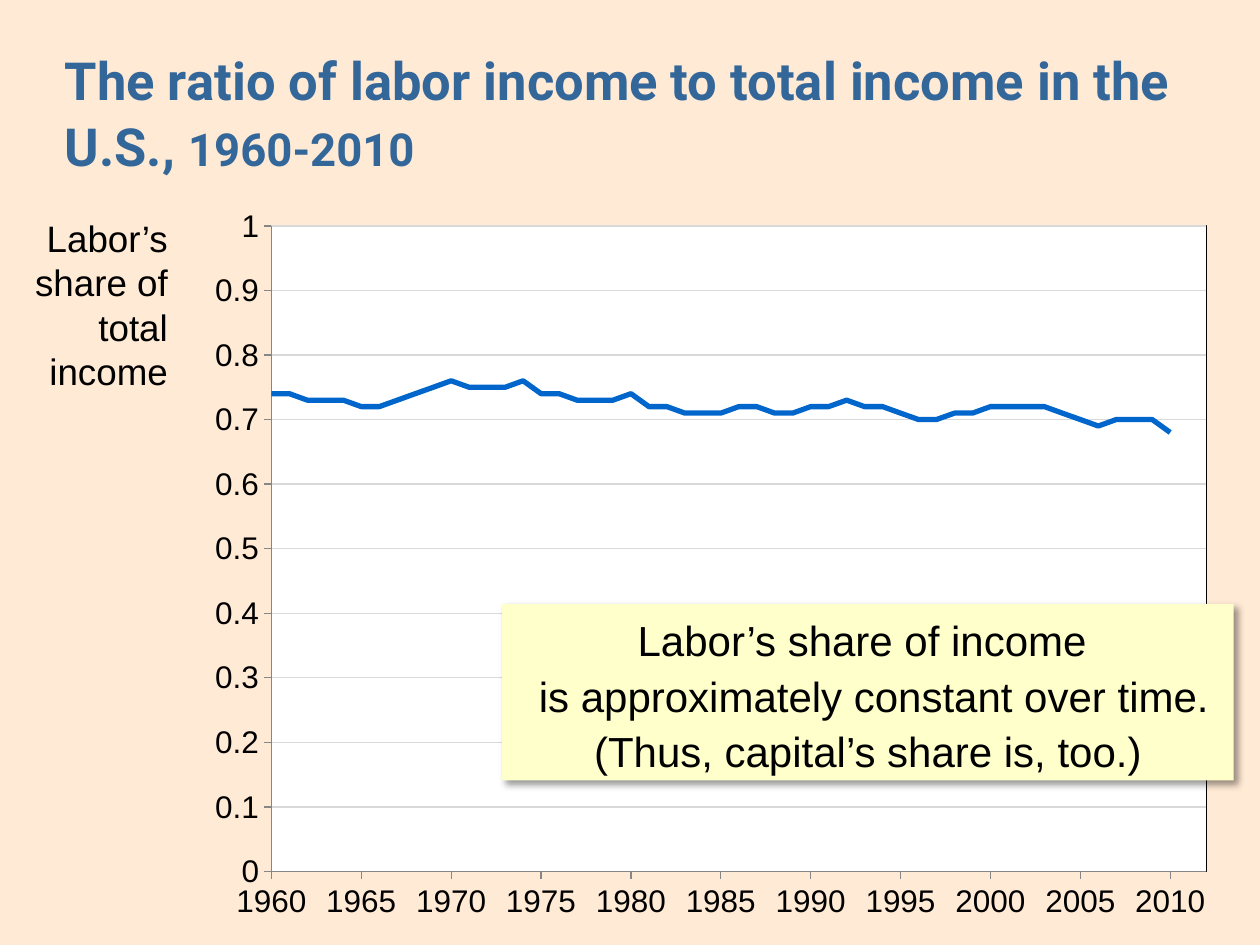
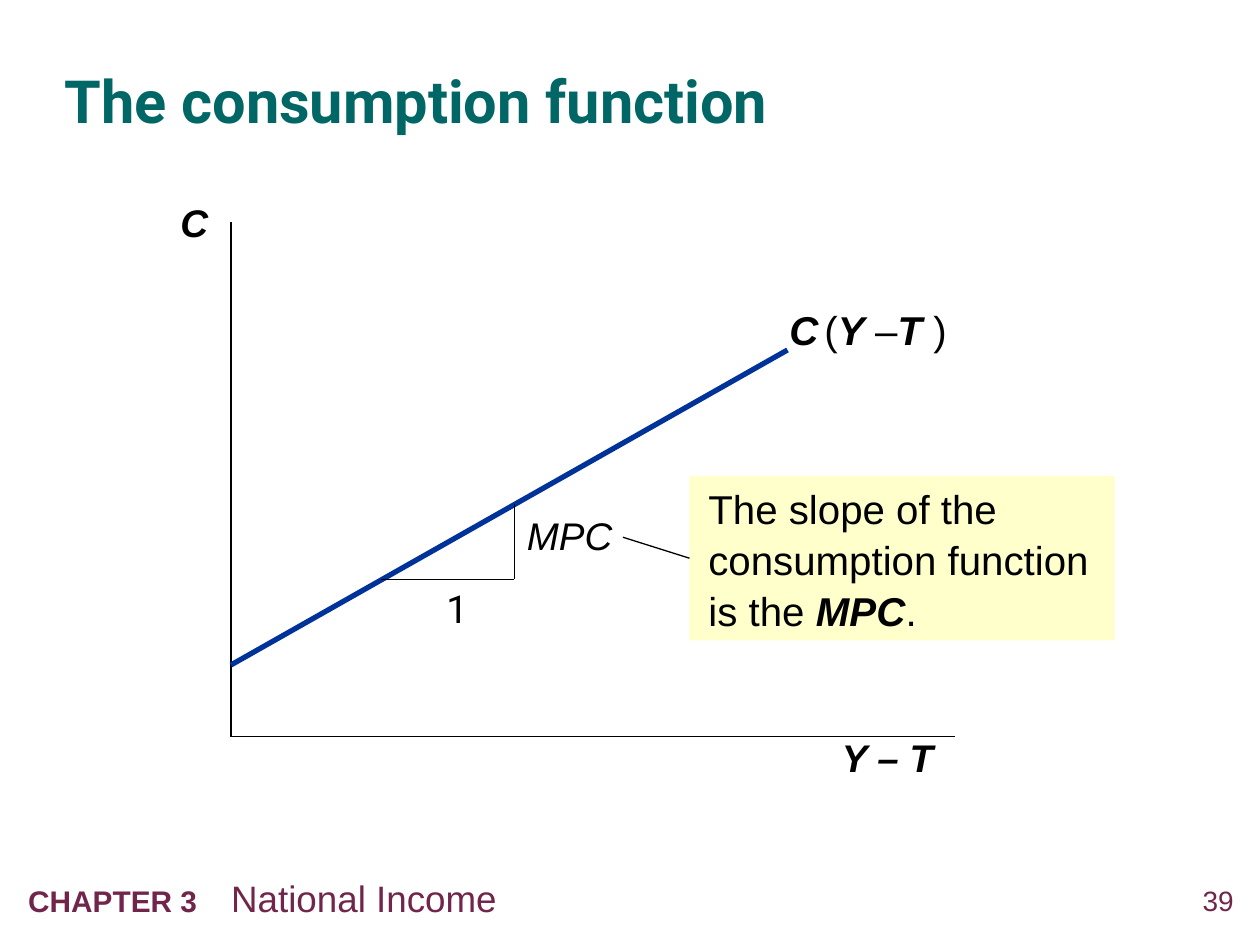
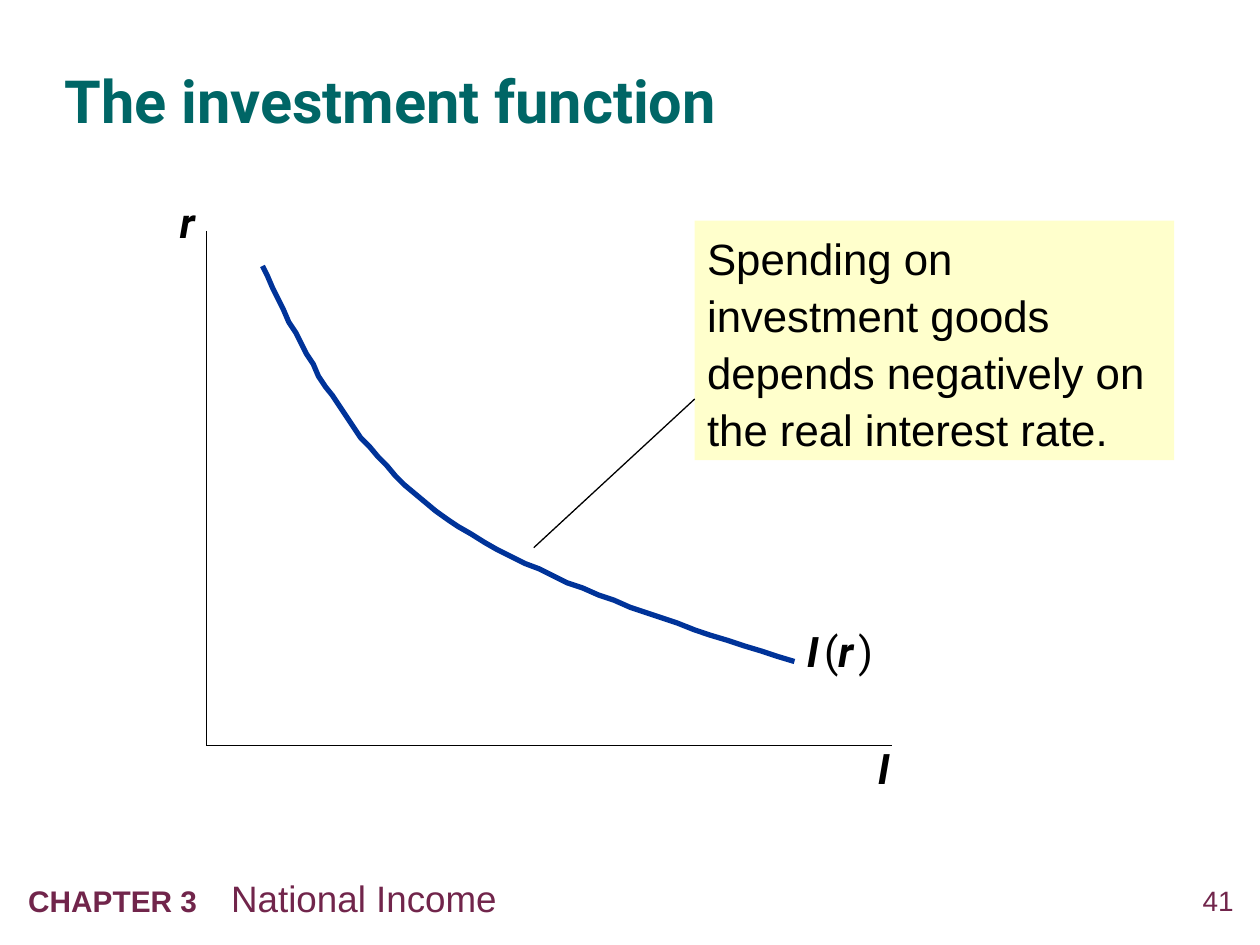
from dataclasses import dataclass

from lxml import etree
from pptx import Presentation
from pptx.chart.data import XyChartData
from pptx.dml.color import RGBColor as RGB
from pptx.enum.chart import XL_CHART_TYPE as Kind, XL_TICK_MARK as Tick
from pptx.enum.shapes import MSO_CONNECTOR as Link, MSO_SHAPE as Shape
from pptx.enum.text import MSO_ANCHOR as Anchor, MSO_AUTO_SIZE as Fit, PP_ALIGN as Align
from pptx.oxml import parse_xml
from pptx.oxml.ns import nsdecls, qn
from pptx.util import Pt


@dataclass(frozen=True)
class Theme:
    sans: str = "Arial"
    head: str = "Roboto"
    ink: str = "000000"
    white: str = "FFFFFF"
    peach: str = "FFEAD5"
    blue: str = "336699"
    teal: str = "006666"
    plum: str = "71254B"
    cream: str = "FFFFCC"
    curve: str = "003399"
    trend: str = "0066CC"
    grid: str = "D9D9D9"
    axis: str = "868686"
    big: int = 34
    wide: int = 30
    years: int = 26
    tick: int = 18
    note: int = 21
    sign: int = 22
    text: int = 23
    mark: int = 24
    call: int = 25
    gap: int = 12
    page: int = 16
    lead: int = 17
    thin: float = 0.75
    thick: float = 3


T = Theme()
HEAVY = dict(bold=True, italic=True)
PLAIN = dict(bold=False, italic=False)
SHARE = [
    0.74, 0.74, 0.73, 0.73, 0.73, 0.72, 0.72, 0.73, 0.74, 0.75,
    0.76, 0.75, 0.75, 0.75, 0.76, 0.74, 0.74, 0.73, 0.73, 0.73,
    0.74, 0.72, 0.72, 0.71, 0.71, 0.71, 0.72, 0.72, 0.71, 0.71,
    0.72, 0.72, 0.73, 0.72, 0.72, 0.71, 0.70, 0.70, 0.71, 0.71,
    0.72, 0.72, 0.72, 0.72, 0.71, 0.70, 0.69, 0.70, 0.70, 0.70, 0.68,
]


def color(code):
    return RGB.from_string(code)


def points(*nums):
    return [Pt(n) for n in nums]


def paint(line, code, width):
    line.color.rgb = color(code)
    line.width = Pt(width)


def style(font, size, face=T.sans, ink=T.ink, bold=False, italic=False):
    font.size, font.name = Pt(size), face
    font.bold, font.italic = bold, italic
    font.color.rgb = color(ink)


def write(frame, chunks, align=Align.LEFT, space=None, pad=(7.2, 3.6),
          anchor=Anchor.TOP, fit=Fit.SHAPE_TO_FIT_TEXT, **base):
    frame.word_wrap = True
    frame.auto_size = fit
    frame.vertical_anchor = anchor
    frame.margin_left = frame.margin_right = Pt(pad[0])
    frame.margin_top = frame.margin_bottom = Pt(pad[1])
    para = frame.paragraphs[0]
    para.alignment = align
    if space:
        para.line_spacing = space
    if isinstance(chunks, str):
        chunks = [(chunks, {})]
    for text, look in chunks:
        for i, piece in enumerate(text.split("\n")):
            if i:
                para.add_line_break()
            run = para.add_run()
            run.text = piece
            style(run.font, **{**base, **look})
    return para


def label(slide, box, chunks, **look):
    return write(slide.shapes.add_textbox(*points(*box)).text_frame, chunks, **look)


def callout(slide, box, chunks, **look):
    shape = slide.shapes.add_shape(Shape.RECTANGLE, *points(*box))
    shape.shadow.inherit = False
    shape.fill.solid()
    shape.fill.fore_color.rgb = color(T.cream)
    shape.line.fill.background()
    write(shape.text_frame, chunks, **look)
    return shape


def cast(shape):
    effects = shape._element.spPr.find(qn("a:effectLst"))
    effects.append(parse_xml(
        f'<a:outerShdw {nsdecls("a")} blurRad="{Pt(4)}" dist="{Pt(3)}" dir="2700000">'
        f'<a:srgbClr val="{T.ink}"><a:alpha val="40000"/></a:srgbClr></a:outerShdw>'))


def stroke(slide, start, end, ink=T.ink, width=T.thin):
    line = slide.shapes.add_connector(Link.STRAIGHT, *points(*start, *end))
    paint(line.line, ink, width)
    etree.SubElement(line._element.spPr, qn("a:effectLst"))
    return line


def axes(slide, left, top, right, base):
    stroke(slide, (left, top), (left, base))
    stroke(slide, (left, base), (right, base))


def bend(start, turns, steps=24):
    for one, two, end in turns:
        for i in range(1, steps + 1):
            t = i / steps
            u = 1 - t
            yield tuple(
                u**3 * a + 3 * u * u * t * b + 3 * u * t * t * c + t**3 * d
                for a, b, c, d in zip(start, one, two, end))
        start = end


def curve(slide, start, turns):
    form = slide.shapes.build_freeform(*start, scale=Pt(1))
    form.add_line_segments(list(bend(start, turns)), close=False)
    shape = form.convert_to_shape()
    shape.shadow.inherit = False
    shape.fill.background()
    paint(shape.line, T.curve, T.thick)


def start_slide(deck, title, box, back=T.white, **look):
    slide = deck.slides.add_slide(deck.slide_layouts[5])
    slide.background.fill.solid()
    slide.background.fill.fore_color.rgb = color(back)
    head = slide.shapes.title
    head.left, head.top, head.width, head.height = points(*box)
    write(head.text_frame, title, space=1.05, pad=(0, 0), anchor=Anchor.MIDDLE,
          fit=Fit.NONE, face=T.head, bold=True, **look)
    return slide


def footer(slide, page):
    label(slide, (665, 505, 40, 23), page, align=Align.RIGHT, pad=(0, 0),
          fit=Fit.NONE, size=T.page, ink=T.plum)
    para = label(slide, (9, 497, 589, 32), [
        ("CHAPTER 3\t", dict(size=T.lead, bold=True)),
        ("National Income", dict(size=T.note)),
    ], ink=T.plum)
    tabs = etree.SubElement(para._p.get_or_add_pPr(), qn("a:tabLst"))
    etree.SubElement(tabs, qn("a:tab"), pos=str(Pt(116)), algn="l")


def graph_slide(deck, title, page):
    slide = start_slide(deck, title, (37, 19, 649, 74), size=T.big, ink=T.teal)
    footer(slide, page)
    return slide


def frame_plot(chart, x, y, w, h):
    area = chart._chartSpace.chart.plotArea
    old = area.find(qn("c:layout"))
    if old is not None:
        area.remove(old)
    sizes = "".join(f'<c:{k} val="{v}"/>' for k, v in zip("xywh", (x, y, w, h)))
    area.insert(0, parse_xml(
        f'<c:layout {nsdecls("c")}><c:manualLayout><c:layoutTarget val="inner"/>'
        f'<c:xMode val="edge"/><c:yMode val="edge"/>{sizes}'
        '</c:manualLayout></c:layout>'))
    area.append(parse_xml(
        f'<c:spPr {nsdecls("c", "a")}><a:solidFill><a:srgbClr val="{T.white}"/></a:solidFill>'
        f'<a:ln w="{Pt(T.thin)}"><a:solidFill><a:srgbClr val="{T.ink}"/></a:solidFill></a:ln>'
        '</c:spPr>'))


def scale(axis, low, high, step):
    axis.minimum_scale, axis.maximum_scale, axis.major_unit = low, high, step
    axis.major_tick_mark, axis.minor_tick_mark = Tick.OUTSIDE, Tick.NONE
    axis.has_major_gridlines = False
    axis.tick_labels.number_format = "General"
    axis.tick_labels.number_format_is_linked = False
    style(axis.tick_labels.font, T.tick)
    paint(axis.format.line, T.axis, T.thin)


def share_chart(slide):
    data = XyChartData()
    series = data.add_series("Series 1")
    for year, share in enumerate(SHARE, 1960):
        series.add_data_point(year, share)
    chart = slide.shapes.add_chart(
        Kind.XY_SCATTER_LINES_NO_MARKERS, *points(106, 119, 614, 421), data).chart
    chart.has_legend = chart.has_title = False
    style(chart.font, T.tick)
    chart.plots[0].vary_by_categories = False
    paint(chart.plots[0].series[0].format.line, T.trend, T.thick)
    scale(chart.category_axis, 1960, 2012, 5)
    scale(chart.value_axis, 0, 1, 0.1)
    chart.value_axis.has_major_gridlines = True
    paint(chart.value_axis.major_gridlines.format.line, T.grid, T.thin)
    frame_plot(chart, 0.08, 0.02, 0.87, 0.88)


def labor(deck):
    slide = start_slide(deck, [
        ("The ratio of labor income to total income in the U.S., ", {}),
        ("1960-2010", dict(size=T.years)),
    ], (37, 17, 649, 93), back=T.peach, size=T.wide, ink=T.blue)
    share_chart(slide)
    label(slide, (9, 120, 94, 113), "Labor’s share of total income",
          align=Align.RIGHT, size=T.note)
    cast(callout(
        slide, (287, 345, 418, 101),
        "Labor’s share of income \n is approximately constant over time.\n"
        "(Thus, capital’s share is, too.)",
        align=Align.CENTER, space=1.1, size=T.mark))


def consume(deck):
    slide = graph_slide(deck, "The consumption function", "39")
    axes(slide, 132, 127, 546, 421)
    label(slide, (96, 110, 36, 34), "C", size=T.sign, **HEAVY)
    label(slide, (474, 416, 84, 34), "Y – T", size=T.sign, **HEAVY)
    stroke(slide, (132, 380), (450, 200), T.curve, T.thick)
    label(slide, (444, 171, 108, 35), [
        ("C", HEAVY), (" ", dict(size=T.gap)), ("(", PLAIN), ("Y ", HEAVY),
        ("–", PLAIN), ("T ", HEAVY), (")", PLAIN),
    ], size=T.text)
    stroke(slide, (218, 331), (294, 331))
    label(slide, (248, 331, 29, 34), "1", size=T.sign, face=T.head)
    stroke(slide, (294, 331), (294, 288))
    label(slide, (294, 289, 84, 34), "MPC", size=T.sign, italic=True)
    box = callout(slide, (394, 272, 243, 94), [
        ("The slope of the consumption function is the ", {}),
        ("MPC", HEAVY), (".", {}),
    ], space=1.05, pad=(10.8, 3.6), size=T.text)
    stroke(slide, (394, 319), (356, 307)).begin_connect(box, 1)


def invest(deck):
    slide = graph_slide(deck, "The investment function", "41")
    axes(slide, 118, 132, 510, 426)
    sign = dict(size=T.mark, face=T.head)
    label(slide, (90, 109, 34, 36), "r", align=Align.CENTER, **sign, **HEAVY)
    label(slide, (488, 421, 34, 36), "I", align=Align.CENTER, **sign, **HEAVY)
    gap = (" ", dict(size=T.gap))
    label(slide, (454, 354, 62, 36), [
        ("I", HEAVY), gap, ("(", PLAIN), ("r", HEAVY), gap, (")", PLAIN),
    ], **sign)
    curve(slide, (150, 152), [
        ((174, 203), (199, 253), (249, 292)),
        ((300, 329), (377, 354), (454, 378)),
    ])
    callout(slide, (397, 126, 274, 137),
            "Spending on investment goods \ndepends negatively on the real interest rate.",
            space=1.09, size=T.call)
    stroke(slide, (397, 228), (305, 313))


def main():
    deck = Presentation()
    deck.slide_width, deck.slide_height = points(720, 540)
    for build in (labor, consume, invest):
        build(deck)
    deck.save("out.pptx")


if __name__ == "__main__":
    main()
